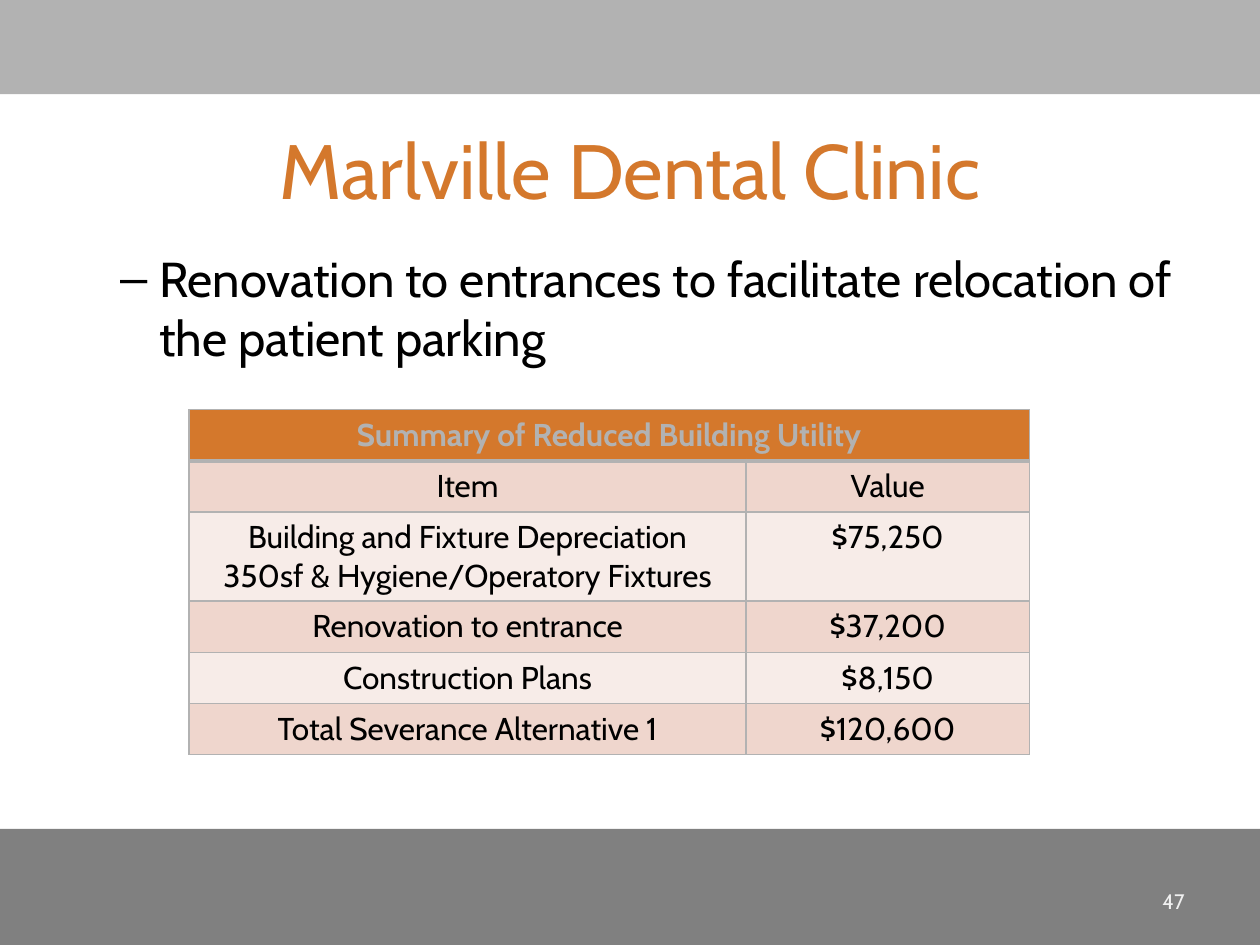
from dataclasses import dataclass

import pptx
import pptx.dml.color
import pptx.enum.shapes
import pptx.enum.text
import pptx.oxml
import pptx.oxml.ns
import pptx.util
from pptx.util import Cm, Pt

ALIGN = pptx.enum.text.PP_ALIGN
ANCHOR = pptx.enum.text.MSO_ANCHOR


@dataclass(frozen=True)
class Theme:
    font: str = "Cabin"
    accent: str = "D4782C"
    text: str = "000000"
    light_text: str = "F0F0F0"
    white: str = "FFFFFF"
    top_bar: str = "B2B2B2"
    bottom_bar: str = "808080"
    border: str = "B2B2B2"
    band_dark: str = "EFD6CD"
    band_light: str = "F7ECE8"
    title_size: int = 44
    body_size: int = 28
    table_size: int = 18
    number_size: int = 12


@dataclass(frozen=True)
class Box:
    left: float
    top: float
    width: float
    height: float

    def emu(self) -> tuple:
        return tuple(Cm(v) for v in (self.left, self.top, self.width, self.height))


@dataclass(frozen=True)
class Bar:
    box: Box
    color: str


@dataclass(frozen=True)
class Row:
    item: str
    value: str
    height: float = 1.03


THEME = Theme()
BARS = [
    Bar(Box(0, 0, 25.4, 1.9), THEME.top_bar),
    Bar(Box(0, 16.71, 25.4, 2.34), THEME.bottom_bar),
]
TABLE_TITLE = Row("Summary of Reduced Building Utility", "")
ROWS = [
    Row("Item", "Value"),
    Row("Building and Fixture Depreciation\n350sf & Hygiene/Operatory Fixtures", "$75,250", 1.8),
    Row("Renovation to entrance", "$37,200"),
    Row("Construction Plans", "$8,150"),
    Row("Total Severance Alternative 1", "$120,600"),
]
COLUMN_WIDTHS = (11.23, 5.71)


def rgb(color: str):
    return pptx.dml.color.RGBColor.from_string(color)


def set_fill(obj, color: str) -> None:
    obj.fill.solid()
    obj.fill.fore_color.rgb = rgb(color)


def write(tf, text: str, *, size: int, color: str = THEME.text, bold: bool = False,
          align=ALIGN.CENTER, level: int = 0) -> None:
    """Fill a text frame, one paragraph for each line of text."""
    for i, line in enumerate(text.split("\n")):
        p = tf.add_paragraph() if i else tf.paragraphs[0]
        p.alignment, p.level = align, level
        p.space_before = Pt(0)
        r = p.add_run()
        r.text = line
        r.font.name, r.font.size, r.font.bold = THEME.font, Pt(size), bold
        r.font.color.rgb = rgb(color)


def place(sp, box: Box, anchor) -> None:
    """Move a placeholder and set its frame."""
    sp.left, sp.top, sp.width, sp.height = box.emu()
    set_fill(sp, THEME.white)
    tf = sp.text_frame
    tf.word_wrap = True
    tf.auto_size = pptx.enum.text.MSO_AUTO_SIZE.NONE
    tf.vertical_anchor = anchor
    tf.margin_left = tf.margin_right = Cm(0.51)
    tf.margin_top = tf.margin_bottom = Cm(0.13)


def set_dash_bullet(p, margin: float, hanging: float) -> None:
    pPr = p._p.get_or_add_pPr()
    pPr.set("marL", str(Cm(margin)))
    pPr.set("indent", str(-Cm(hanging)))
    bullet = pptx.oxml.parse_xml(f'<a:buChar {pptx.oxml.ns.nsdecls("a")} char="–"/>')
    pPr.append(bullet)


def add_bar(s, bar: Bar) -> None:
    sp = s.shapes.add_shape(pptx.enum.shapes.MSO_SHAPE.RECTANGLE, *bar.box.emu())
    sp.shadow.inherit = False
    set_fill(sp, bar.color)
    sp.line.fill.background()


def set_borders(cell, top: float = 1, bottom: float = 1) -> None:
    tcPr = cell._tc.get_or_add_tcPr()
    for side, width in (("L", 1), ("R", 1), ("T", top), ("B", bottom)):
        tcPr.append(pptx.oxml.parse_xml(
            f'<a:ln{side} {pptx.oxml.ns.nsdecls("a")} w="{Pt(width)}">'
            f'<a:solidFill><a:srgbClr val="{THEME.border}"/></a:solidFill></a:ln{side}>'))


def add_summary_table(s, left: float, top: float) -> None:
    rows = [TABLE_TITLE, *ROWS]
    box = Box(left, top, sum(COLUMN_WIDTHS), sum(row.height for row in rows))
    table = s.shapes.add_table(len(rows), len(COLUMN_WIDTHS), *box.emu()).table
    for column, width in zip(table.columns, COLUMN_WIDTHS):
        column.width = Cm(width)
    table.cell(0, 0).merge(table.cell(0, 1))

    for i, row in enumerate(rows):
        table.rows[i].height = Cm(row.height)
        header = i == 0
        band = THEME.band_dark if i % 2 else THEME.band_light
        for j, text in enumerate((row.item, row.value)):
            cell = table.cell(i, j)
            # The rule under the heading is heavier than the others
            set_borders(cell, top=3 if i == 1 else 1, bottom=3 if header else 1)
            set_fill(cell, THEME.accent if header else band)
            if text:
                write(cell.text_frame, text, size=THEME.table_size, bold=header,
                      color=THEME.border if header else THEME.text)


def main() -> None:
    prs = pptx.Presentation()
    prs.slide_width, prs.slide_height = Cm(25.4), Cm(19.05)
    s = prs.slides.add_slide(prs.slide_layouts[1])

    # Title and bullet
    title, body = s.shapes.title, s.placeholders[1]
    place(title, Box(0.64, 2.34, 24.13, 2.11), ANCHOR.MIDDLE)
    write(title.text_frame, "Marlville Dental Clinic", size=THEME.title_size, color=THEME.accent)
    place(body, Box(0.64, 4.88, 24.33, 11.43), ANCHOR.TOP)
    write(body.text_frame,
          "Renovation to entrances to facilitate relocation of the patient parking",
          size=THEME.body_size, align=ALIGN.LEFT, level=1)
    set_dash_bullet(body.text_frame.paragraphs[0], 2.06, 0.79)

    # Bands at the top and bottom
    for bar in BARS:
        add_bar(s, bar)

    # Slide number
    tf = s.shapes.add_textbox(*Box(18.21, 17.65, 5.92, 1.02).emu()).text_frame
    tf.word_wrap = True
    tf.vertical_anchor = ANCHOR.MIDDLE
    write(tf, "47", size=THEME.number_size, color=THEME.light_text, align=ALIGN.RIGHT)

    add_summary_table(s, 3.81, 8.26)
    prs.save("out.pptx")


if __name__ == "__main__":
    main()
